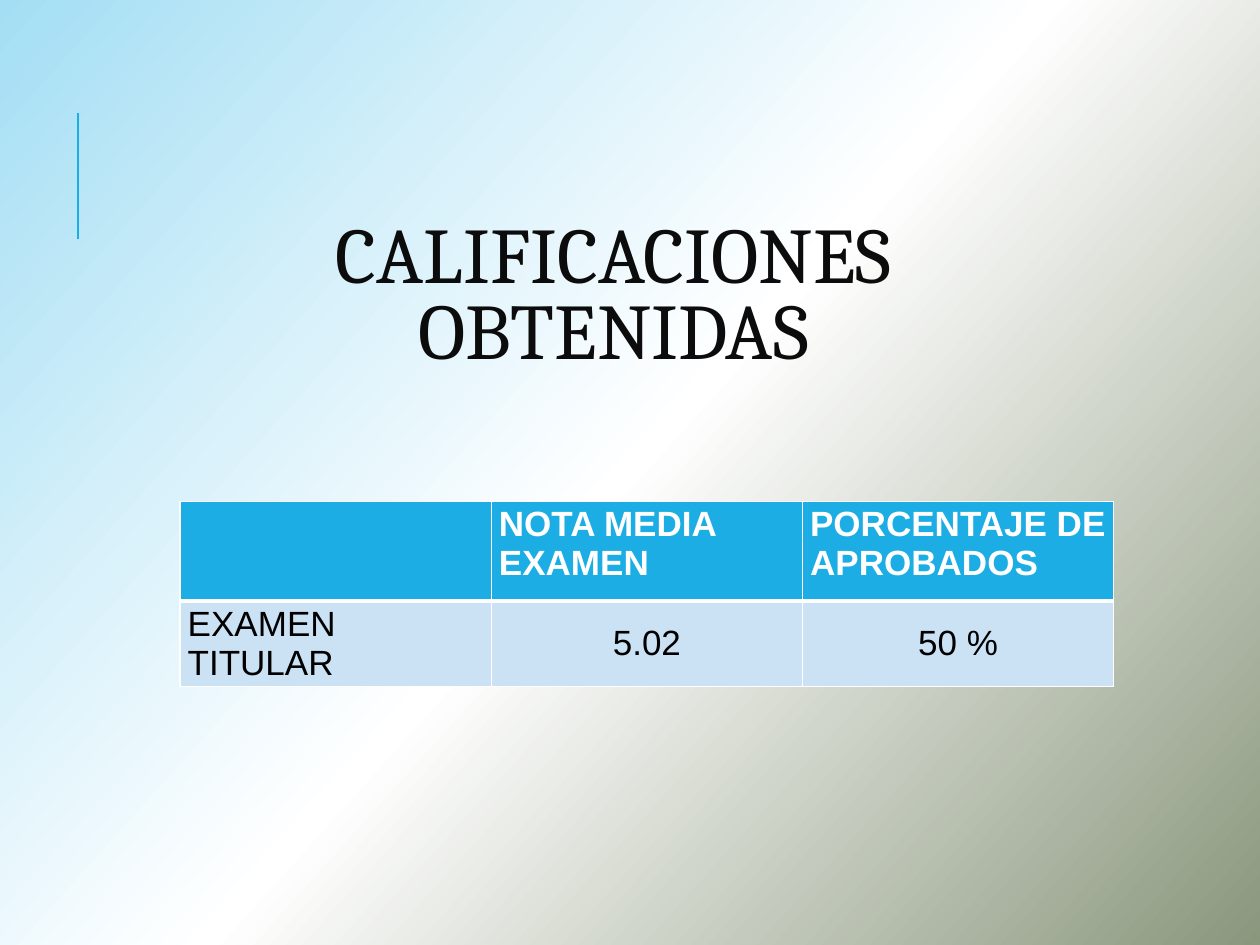
from copy import deepcopy

from lxml.etree import SubElement
from pptx import Presentation
from pptx.dml.color import RGBColor
from pptx.enum.shapes import MSO_CONNECTOR as Link
from pptx.enum.text import MSO_ANCHOR as Anchor, MSO_AUTO_SIZE as Fit, PP_ALIGN as Align
from pptx.oxml.ns import qn
from pptx.util import Inches, Pt

TITLE = "CALIFICACIONES OBTENIDAS"
GRADES = [
    ["", "NOTA MEDIA EXAMEN", "PORCENTAJE DE APROBADOS"],
    ["EXAMEN TITULAR", "5.02", "50 %"],
]
STOPS = ["A4DEF4", "FFFFFF", "8A977D"]
ANGLE = 42
BLUE, PALE, WHITE, BLACK, INK = "1CADE4", "CBE2F5", "FFFFFF", "000000", "0C0C0C"
WIDE, HIGH = 10, 7.5
COL, ROWS = 2.47, [0.79, 0.42]


def rgb(code):
    return RGBColor.from_string(code)


def pad(box):
    box.margin_left = box.margin_right = Inches(0.06)
    box.margin_top = box.margin_bottom = Inches(0.03)


def style(par, face, size, color, bold=False):
    font = par.font
    font.name, font.size, font.bold = face, Pt(size), bold
    font.color.rgb = rgb(color)


def paint_back(slide):
    fill = slide.background.fill
    fill.gradient()
    fill.gradient_angle = 360 - ANGLE
    stops = slide.background._cSld.find(".//" + qn("a:gsLst"))
    stops.insert(1, deepcopy(stops[0]))
    for i, (stop, code) in enumerate(zip(fill.gradient_stops, STOPS)):
        stop.position = i / (len(STOPS) - 1)
        stop.color.rgb = rgb(code)


def add_rule(slide):
    x = Inches(0.62)
    rule = slide.shapes.add_connector(Link.STRAIGHT, x, Inches(1.9), x, Inches(0.9))
    rule.line.color.rgb = rgb(BLUE)
    rule.line.width = Pt(1.5)
    SubElement(rule._element.spPr, qn("a:effectLst"))


def set_title(slide):
    title = slide.shapes.title
    title.left, title.top = Inches(1.88), Inches(1.91)
    title.width, title.height = Inches(5.98), Inches(0.92)
    frame = title.text_frame
    frame.text = TITLE
    frame.word_wrap, frame.auto_size = True, Fit.NONE
    frame.vertical_anchor = Anchor.MIDDLE
    pad(frame)
    par = frame.paragraphs[0]
    par.alignment, par.line_spacing = Align.CENTER, 0.8
    style(par, "Cambria", 45, INK)


def add_edges(cell, base):
    """Draw white cell borders; base is the bottom width in points."""
    props = cell._tc.get_or_add_tcPr()
    for i, (side, width) in enumerate(zip("LRTB", (1, 1, 1, base))):
        edge = props.makeelement(qn("a:ln" + side), {"w": str(Pt(width))})
        fill = SubElement(edge, qn("a:solidFill"))
        SubElement(fill, qn("a:srgbClr"), val=WHITE)
        props.insert(i, edge)


def add_grades(slide):
    count = len(GRADES[0])
    table = slide.shapes.add_table(
        len(GRADES), count, Inches(1.43), Inches(3.98),
        Inches(COL * count), Inches(sum(ROWS))).table
    for col in table.columns:
        col.width = Inches(COL)
    for r, texts in enumerate(GRADES):
        head = r == 0
        table.rows[r].height = Inches(ROWS[r])
        for c, text in enumerate(texts):
            cell = table.cell(r, c)
            cell.text = text
            pad(cell)
            cell.fill.solid()
            cell.fill.fore_color.rgb = rgb(BLUE if head else PALE)
            par = cell.text_frame.paragraphs[0]
            style(par, "Arial", 20, WHITE if head else BLACK, head)
            if not head and c:
                par.alignment = Align.CENTER
                cell.vertical_anchor = Anchor.MIDDLE
            # The two rows share the thick edge under the header.
            add_edges(cell, 3 if head else 1)
            if not head:
                cell._tc.tcPr.find(qn("a:lnT")).set("w", str(Pt(3)))


def main():
    deck = Presentation()
    deck.slide_width, deck.slide_height = Inches(WIDE), Inches(HIGH)
    slide = deck.slides.add_slide(deck.slide_layouts[5])
    paint_back(slide)
    add_rule(slide)
    set_title(slide)
    add_grades(slide)
    deck.save("out.pptx")


if __name__ == "__main__":
    main()
